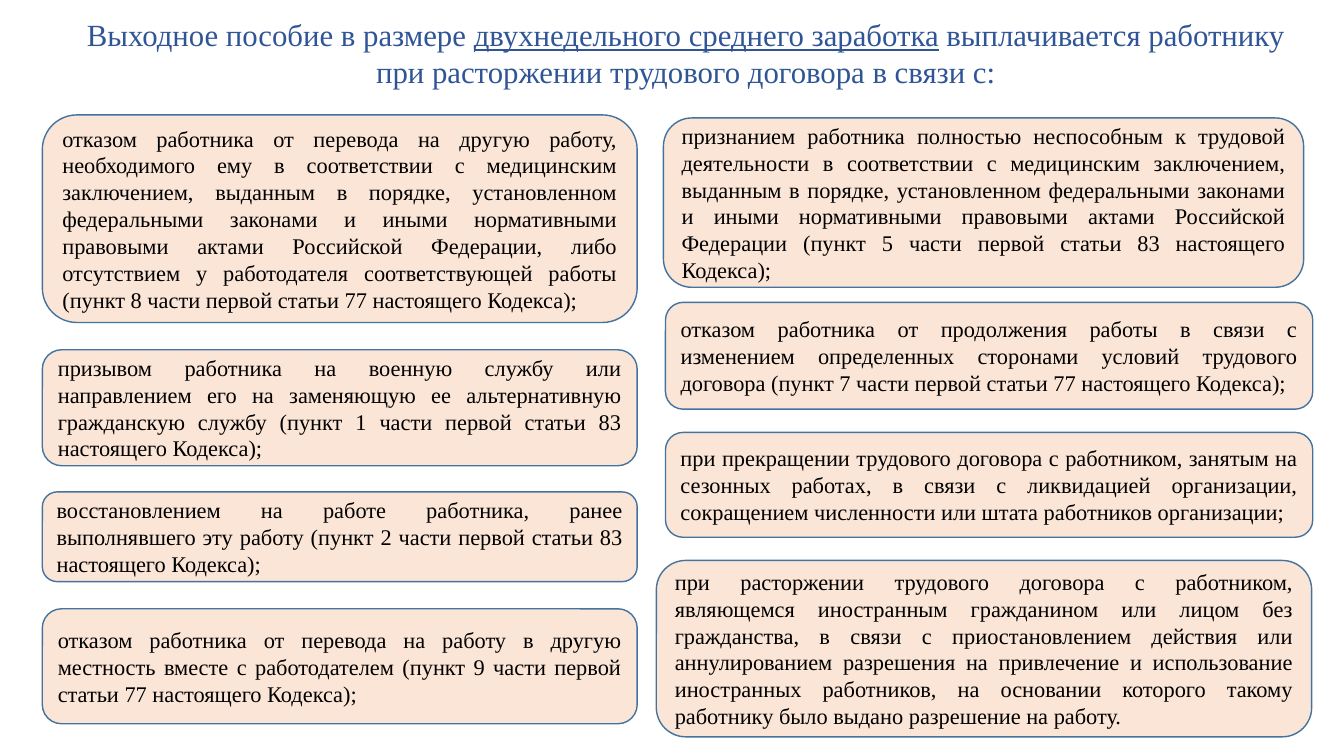
"""Build a slide listing the grounds for two-week severance pay."""
from pptx import Presentation
from pptx.dml.color import RGBColor
from pptx.enum.shapes import MSO_SHAPE
from pptx.enum.text import MSO_ANCHOR, PP_ALIGN
from pptx.util import Inches, Pt

THEME = {
    "font": "Times New Roman",
    "title_size": 22,
    "body_size": 16,
    "title": RGBColor(0x2F, 0x55, 0x97),
    "text": RGBColor(0, 0, 0),
    "fill": RGBColor(0xFB, 0xE5, 0xD6),
    "line": RGBColor(0x43, 0x73, 0x9E),
}

TITLE_BOX = (0.59, 0.11, 12.42, 0.84)
TITLE = [
    ("Выходное пособие в размере ", False),
    ("двухнедельного среднего заработка", True),
    (" выплачивается работнику при расторжении трудового договора в связи с:", False),
]

LEFT_X, LEFT_WIDTH = 0.42, 5.9
LEFT_GROUNDS = [
    (1.14, 2.06, "отказом работника от перевода на другую работу, необходимого ему в "
     "соответствии с медицинским заключением, выданным в порядке, установленном "
     "федеральными законами и иными нормативными правовыми актами Российской "
     "Федерации, либо отсутствием у работодателя соответствующей работы "
     "(пункт 8 части первой статьи 77 настоящего Кодекса);"),
    (3.47, 1.15, "призывом работника на военную службу или направлением его на "
     "заменяющую ее альтернативную гражданскую службу "
     "(пункт 1 части первой статьи 83 настоящего Кодекса);"),
    (4.88, 0.89, "восстановлением на работе работника, ранее выполнявшего эту работу "
     "(пункт 2 части первой статьи 83 настоящего Кодекса);"),
    (6.04, 1.14, "отказом работника от перевода на работу в другую местность вместе с "
     "работодателем (пункт 9 части первой статьи 77 настоящего Кодекса);"),
]
RIGHT_GROUNDS = [
    ((6.58, 1.17, 6.35, 1.68), "признанием работника полностью неспособным к трудовой "
     "деятельности в соответствии с медицинским заключением, выданным в порядке, "
     "установленном федеральными законами и иными нормативными правовыми актами "
     "Российской Федерации (пункт 5 части первой статьи 83 настоящего Кодекса);"),
    ((6.6, 3, 6.42, 1.06), "отказом работника от продолжения работы в связи с изменением "
     "определенных сторонами условий трудового договора "
     "(пункт 7 части первой статьи 77 настоящего Кодекса);"),
    ((6.6, 4.29, 6.42, 1.04), "при прекращении трудового договора с работником, занятым "
     "на сезонных работах, в связи с ликвидацией организации, сокращением численности "
     "или штата работников организации;"),
    ((6.51, 5.56, 6.5, 1.75), "при расторжении трудового договора с работником, "
     "являющемся иностранным гражданином или лицом без гражданства, в связи с "
     "приостановлением действия или аннулированием разрешения на привлечение и "
     "использование иностранных работников, на основании которого такому работнику "
     "было выдано разрешение на работу."),
]


def style_run(r, size, color):
    r.font.name = THEME["font"]
    r.font.size = Pt(size)
    r.font.color.rgb = color


def add_title(slide):
    tf = slide.shapes.add_textbox(*map(Inches, TITLE_BOX)).text_frame
    tf.word_wrap = True
    p = tf.paragraphs[0]
    p.alignment = PP_ALIGN.CENTER
    for text, underlined in TITLE:
        r = p.add_run()
        r.text = text
        r.font.underline = underlined
        style_run(r, THEME["title_size"], THEME["title"])


def add_ground(slide, box, text):
    sp = slide.shapes.add_shape(MSO_SHAPE.ROUNDED_RECTANGLE, *map(Inches, box))
    sp.shadow.inherit = False
    sp.fill.solid()
    sp.fill.fore_color.rgb = THEME["fill"]
    sp.line.color.rgb = THEME["line"]
    sp.line.width = Pt(1)
    tf = sp.text_frame
    tf.word_wrap = True
    tf.vertical_anchor = MSO_ANCHOR.MIDDLE
    tf.text = text
    p = tf.paragraphs[0]
    p.alignment = PP_ALIGN.JUSTIFY
    style_run(p.runs[0], THEME["body_size"], THEME["text"])


def main():
    prs = Presentation()
    prs.slide_width, prs.slide_height = Inches(13.33), Inches(7.5)
    slide = prs.slides.add_slide(prs.slide_layouts[6])
    add_title(slide)
    for top, height, text in LEFT_GROUNDS:
        add_ground(slide, (LEFT_X, top, LEFT_WIDTH, height), text)
    for box, text in RIGHT_GROUNDS:
        add_ground(slide, box, text)
    prs.save("out.pptx")


if __name__ == "__main__":
    main()
